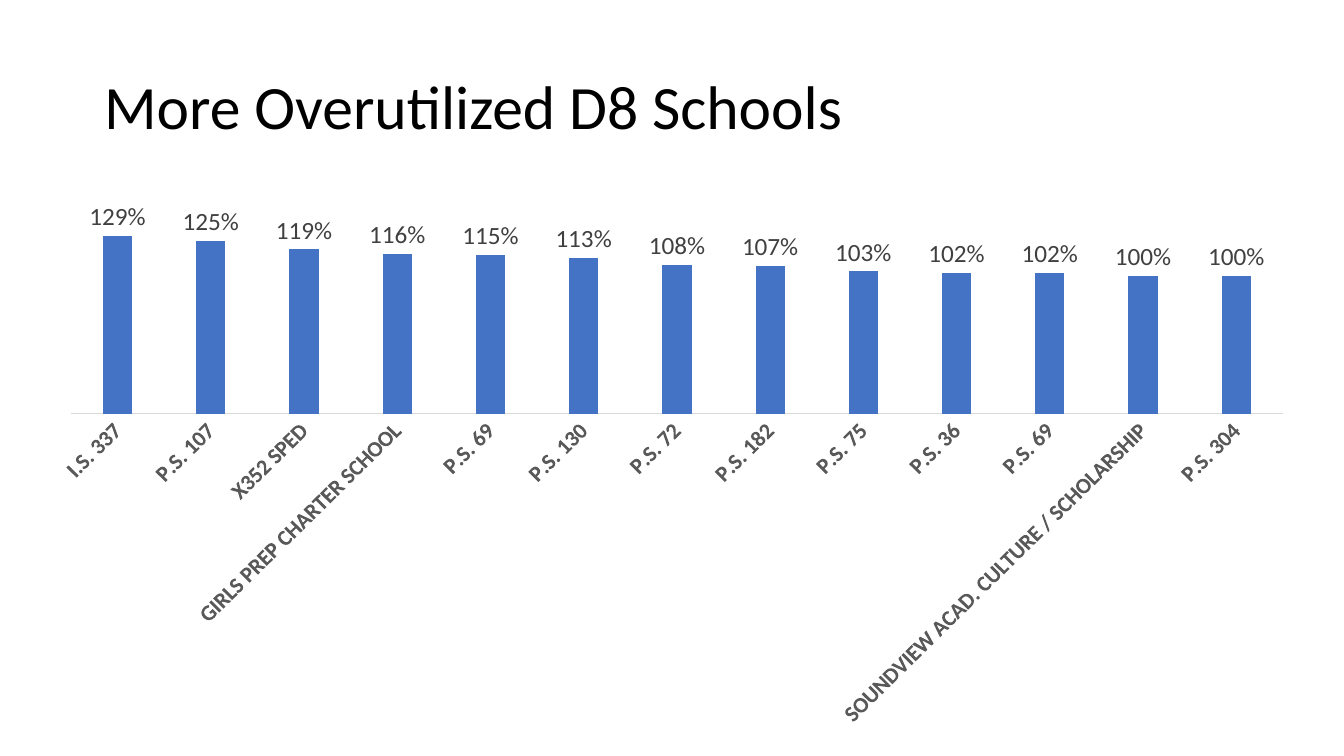
from pptx import Presentation
from pptx.chart.data import CategoryChartData
from pptx.dml.color import RGBColor
from pptx.enum.chart import XL_CHART_TYPE, XL_LABEL_POSITION, XL_TICK_MARK
from pptx.enum.text import MSO_ANCHOR
from pptx.util import Inches, Pt

WIDE, HIGH = Inches(13.333), Inches(7.5)
FACE = "Calibri"
HUES = {"title": "000000", "bar": "4472C4", "axis": "595959",
        "label": "404040", "line": "D9D9D9"}
RATES = [
    ("I.S. 337", 1.29),
    ("P.S. 107", 1.25),
    ("X352 SPED", 1.19),
    ("GIRLS PREP CHARTER SCHOOL", 1.16),
    ("P.S. 69", 1.15),
    ("P.S. 130", 1.13),
    ("P.S. 72", 1.08),
    ("P.S. 182", 1.07),
    ("P.S. 75", 1.03),
    ("P.S. 36", 1.02),
    ("P.S. 69", 1.02),
    ("SOUNDVIEW ACAD. CULTURE / SCHOLARSHIP", 1),
    ("P.S. 304", 1),
]


def apply(item, **format):
    for name, value in format.items():
        setattr(item, name, value)


def hue(name):
    return RGBColor.from_string(HUES[name])


def style(font, size, color, bold=False):
    apply(font, name=FACE, size=Pt(size), bold=bold)
    font.color.rgb = hue(color)


def place(left, top, width, height):
    return (int(WIDE * left), int(HIGH * top),
            int(WIDE * width), int(HIGH * height))


def add_title(slide, text, box):
    frame = slide.shapes.add_textbox(*box).text_frame
    apply(frame, word_wrap=True, vertical_anchor=MSO_ANCHOR.MIDDLE)
    line = frame.paragraphs[0]
    apply(line, text=text, line_spacing=0.9)
    style(line.runs[0].font, 44, "title")


def format_axes(chart):
    names, scale = chart.category_axis, chart.value_axis
    apply(names, major_tick_mark=XL_TICK_MARK.NONE,
          minor_tick_mark=XL_TICK_MARK.NONE, has_major_gridlines=False)
    style(names.tick_labels.font, 16, "axis", True)
    names.format.line.color.rgb = hue("line")
    names.format.line.width = Pt(0.75)
    body = names._element.txPr.bodyPr
    body.set("rot", "-2700000")
    body.set("vert", "horz")
    apply(scale, visible=False, has_major_gridlines=False,
          minimum_scale=0, maximum_scale=1.4)
    apply(scale.tick_labels, number_format="0%",
          number_format_is_linked=False)


def add_bars(slide, rates, box):
    data = CategoryChartData(number_format="0%")
    data.categories = [school for school, rate in rates]
    data.add_series("Series 1", [rate for school, rate in rates])
    kind = XL_CHART_TYPE.COLUMN_CLUSTERED
    chart = slide.shapes.add_chart(kind, *box, data).chart
    apply(chart, has_title=False, has_legend=False)
    style(chart.font, 10, "title")
    format_axes(chart)
    plot = chart.plots[0]
    apply(plot, gap_width=219, overlap=-27, vary_by_categories=False,
          has_data_labels=True)
    labels = plot.data_labels
    apply(labels, show_value=True, number_format="0%",
          number_format_is_linked=False,
          position=XL_LABEL_POSITION.OUTSIDE_END)
    style(labels.font, 18, "label")
    fill = plot.series[0].format.fill
    fill.solid()
    fill.fore_color.rgb = hue("bar")


def main():
    deck = Presentation()
    apply(deck, slide_width=WIDE, slide_height=HIGH)
    slide = deck.slides.add_slide(deck.slide_layouts[6])
    add_title(slide, "More Overutilized D8 Schools",
              place(0.07, 0.05, 0.86, 0.19))
    add_bars(slide, RATES, (Inches(0.35), Inches(2),
                            Inches(12.63), Inches(5.32)))
    deck.save("out.pptx")


if __name__ == "__main__":
    main()
